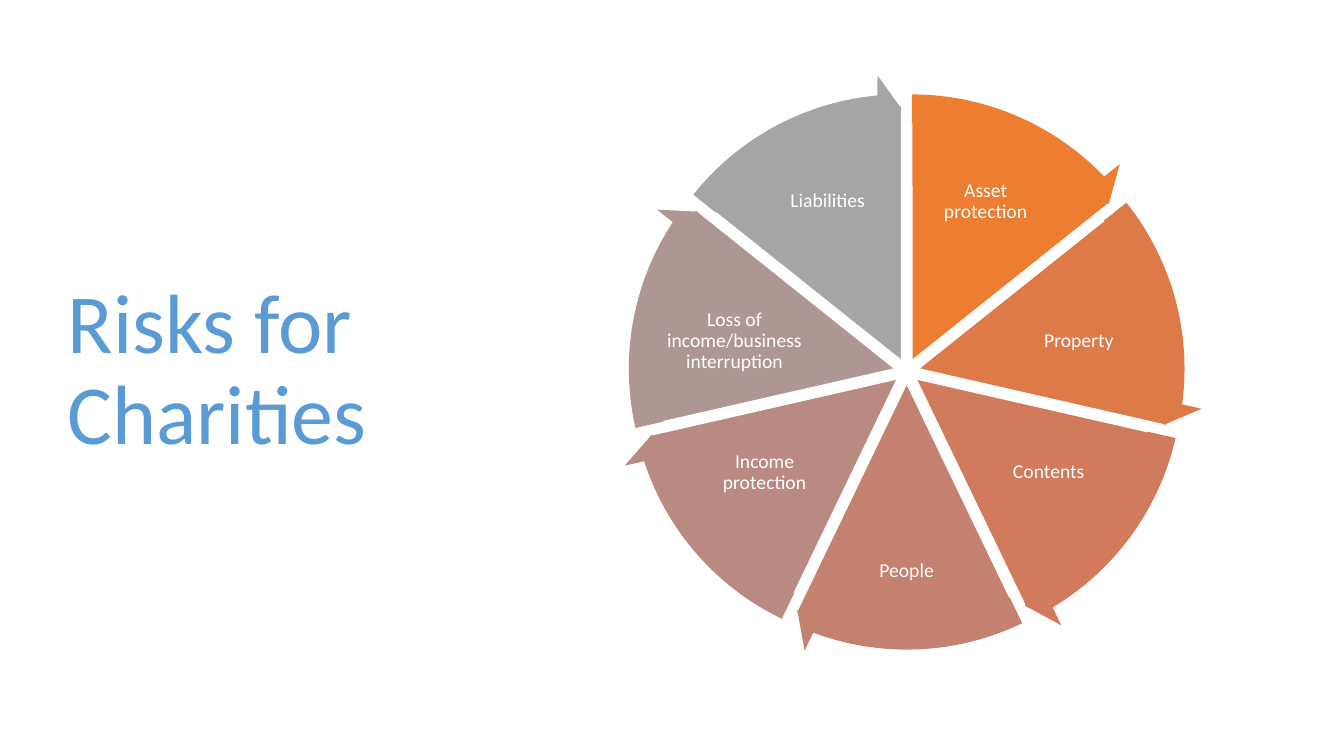
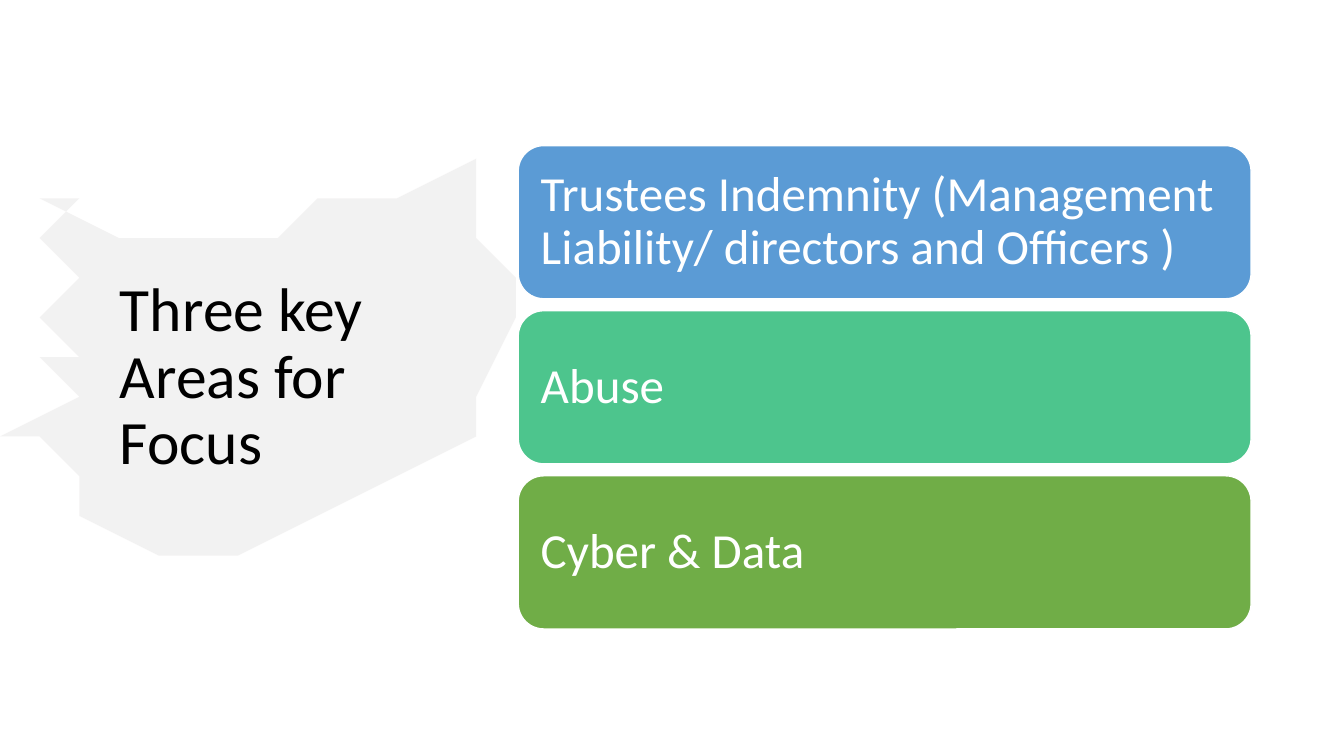
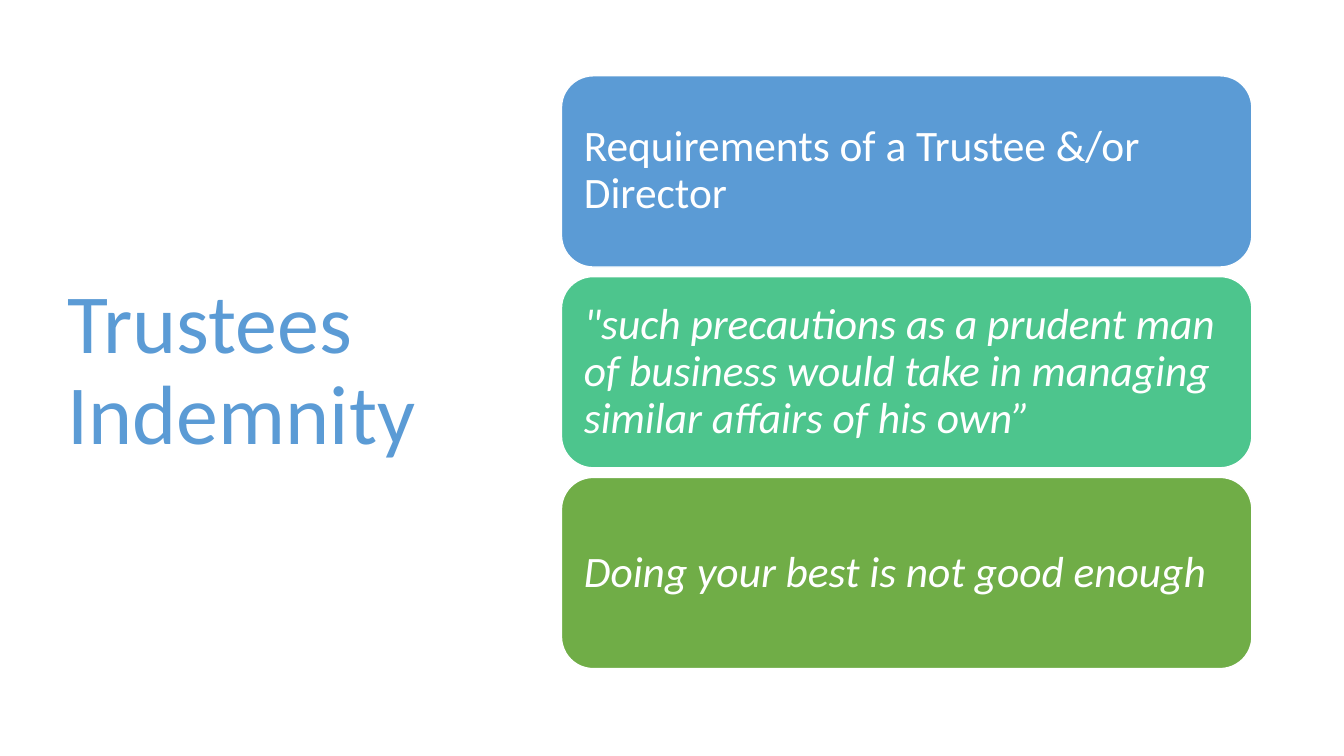
import pptx
import pptx.util
import pptx.dml.color
import pptx.enum.shapes
import pptx.enum.text
import pptx.oxml.ns
import lxml.etree
import itertools
import math

Cm, Pt = pptx.util.Cm, pptx.util.Pt
RGBColor = pptx.dml.color.RGBColor
MSO_SHAPE = pptx.enum.shapes.MSO_SHAPE
ANCHOR = pptx.enum.text.MSO_ANCHOR
ALIGN = pptx.enum.text.PP_ALIGN

# Shared style
FONT = "Calibri"
WHITE = RGBColor(0xFF, 0xFF, 0xFF)
BLACK = RGBColor(0x00, 0x00, 0x00)
BLUE = RGBColor(0x5B, 0x9B, 0xD5)
MINT = RGBColor(0x4D, 0xC5, 0x8D)
GREEN = RGBColor(0x70, 0xAD, 0x47)
BRUSH_GREY = RGBColor(0xE7, 0xE6, 0xE6)
CARD_COLOURS = [BLUE, MINT, GREEN]
TITLE_BOX = (1.45, 1.73, 10.57, 15.29)

# Slide 1: sectors run clockwise from the top
RISKS = [
    ("Asset protection", RGBColor(0xED, 0x7D, 0x31)),
    ("Property", RGBColor(0xDE, 0x7A, 0x47)),
    ("Contents", RGBColor(0xD1, 0x7B, 0x5C)),
    ("People", RGBColor(0xC4, 0x81, 0x70)),
    ("Income protection", RGBColor(0xB9, 0x8A, 0x82)),
    ("Loss of income/business interruption", RGBColor(0xAE, 0x96, 0x94)),
    ("Liabilities", RGBColor(0xA5, 0xA5, 0xA5)),
]
WHEEL_CENTRE = (22.85, 9.36)
SECTOR_SHIFT = 0.3
PIE_SIZE, ARROW_SIZE = 12.85, 14.43
# Offset from the wheel centre, then size; the left half mirrors the right
LABEL_BOXES = [
    (1.99, -4.28, 3.05, 2.44),
    (4.34, -0.77, 3.52, 2.13),
    (3.58, 2.55, 3.05, 2.36),
    (0, 5.04, 2.97, 2.13),
]

# Slides 2 and 3: card text and whether it is italic
FOCUS_AREAS = [
    ("Trustees Indemnity (Management Liability/ directors and Officers )", False),
    ("Abuse", False),
    ("Cyber & Data", False),
]
DUTIES = [
    ("Requirements of a Trustee &/or Director", False),
    ("\"such precautions as a prudent man of business would take in managing "
     "similar affairs of his own”", True),
    ("Doing your best is not good enough", True),
]

# Brush stroke in cm: smooth edge from the top right tip round to the lower left
BRUSH_EDGE = [
    (11.7, 3.8), (12, 4.1), (12.5, 5.3), (12.3, 6), (12.6, 6.9),
    (13.05, 8.4), (12.1, 10.1), (11.6, 11), (10.1, 12.3),
    (8.5, 13.3), (6.3, 13.8), (3.5, 13.7), (2.5, 13.2),
]
# Bristle tips up the left side; a notch is cut between each two
BRISTLE_TIPS = [
    (1.7, 12.8), (0.9, 11.4), (0.5, 10.9), (0.9, 9.1),
    (0.65, 8.4), (0.8, 7.8), (0.75, 5.8), (1.2, 4.65),
]
NOTCH_DEPTH = 0.7
# Upper edge back to the start
BRUSH_TOP = [(3.3, 5.7), (4.9, 5.95), (6.6, 5.8), (8.3, 5.4), (10.2, 4.6)]


def write(text_frame, text, size, color, align=ALIGN.LEFT, italic=False, inset=None):
    text_frame.word_wrap = True
    text_frame.auto_size = pptx.enum.text.MSO_AUTO_SIZE.NONE
    text_frame.vertical_anchor = ANCHOR.MIDDLE
    if inset is not None:
        text_frame.margin_left = text_frame.margin_right = Cm(inset)
        text_frame.margin_top = text_frame.margin_bottom = Cm(inset)
    paragraph = text_frame.paragraphs[0]
    paragraph.alignment = align
    paragraph.line_spacing = 0.9
    run = paragraph.add_run()
    run.text = text
    run.font.name = FONT
    run.font.size = Pt(size)
    run.font.italic = italic
    run.font.color.rgb = color


def paint(shape, fill, outlined):
    shape.shadow.inherit = False
    shape.fill.solid()
    shape.fill.fore_color.rgb = fill
    if outlined:
        shape.line.color.rgb = WHITE
        shape.line.width = Pt(1)
    else:
        shape.line.fill.background()


def centred_box(x, y, width, height):
    return Cm(x - width / 2), Cm(y - height / 2), Cm(width), Cm(height)


def add_titled_slide(presentation, title, box=TITLE_BOX, size=60, color=BLUE):
    slide = presentation.slides.add_slide(presentation.slide_layouts[5])
    shape = slide.shapes.title
    shape.left, shape.top, shape.width, shape.height = map(Cm, box)
    write(shape.text_frame, title, size=size, color=color)
    return slide


def add_cards(slide, cards, left, top, width, height, gap, size, inset):
    for index, ((text, italic), fill) in enumerate(zip(cards, CARD_COLOURS)):
        card = slide.shapes.add_shape(
            MSO_SHAPE.ROUNDED_RECTANGLE, Cm(left), Cm(top + index * (height + gap)),
            Cm(width), Cm(height))
        paint(card, fill, outlined=True)
        write(card.text_frame, text, size=size, color=WHITE, italic=italic, inset=inset)


def add_risk_wheel(slide):
    count = len(RISKS)
    sweep = 360 / count
    unit = 0.6  # adjustment value of one degree
    sectors = []
    for index, (text, fill) in enumerate(RISKS):
        start = 270 + index * sweep
        middle = math.radians(start + sweep / 2)
        x = WHEEL_CENTRE[0] + SECTOR_SHIFT * math.cos(middle)
        y = WHEEL_CENTRE[1] + SECTOR_SHIFT * math.sin(middle)
        sectors.append((x, y, start, fill))

        # Sector
        pie = slide.shapes.add_shape(MSO_SHAPE.PIE, *centred_box(x, y, PIE_SIZE, PIE_SIZE))
        pie.adjustments[0] = start % 360 * unit
        pie.adjustments[1] = (start + sweep) % 360 * unit
        paint(pie, fill, outlined=True)

        # Label
        mirror = count - 1 - index
        across, down, width, height = LABEL_BOXES[min(index, mirror)]
        side = 1 if index <= mirror else -1
        label = slide.shapes.add_textbox(*centred_box(
            WHEEL_CENTRE[0] + side * across, WHEEL_CENTRE[1] + down, width, height))
        write(label.text_frame, text, size=14, color=WHITE, align=ALIGN.CENTER, inset=0.05)

    # Arrows along the rim
    head = 3.28
    for x, y, start, fill in sectors:
        arrow = slide.shapes.add_shape(
            MSO_SHAPE.CIRCULAR_ARROW, *centred_box(x, y, ARROW_SIZE, ARROW_SIZE))
        end = (start + sweep) * unit - head
        values = (0.05, head, end % (360 * unit), start % 360 * unit, 0.06)
        for position, value in enumerate(values):
            arrow.adjustments[position] = value
        paint(arrow, fill, outlined=False)


def add_brush_stroke(slide):
    bristles = [BRISTLE_TIPS[0]]
    for (x, y), (next_x, next_y) in itertools.pairwise(BRISTLE_TIPS):
        notch = (max(x, next_x) + NOTCH_DEPTH, (y + next_y) / 2)
        bristles += [notch, (next_x, next_y)]
    outline = BRUSH_EDGE + bristles + BRUSH_TOP

    builder = slide.shapes.build_freeform(*outline[0], scale=Cm(1))
    builder.add_line_segments(outline[1:], close=True)
    brush = builder.convert_to_shape()
    paint(brush, BRUSH_GREY, outlined=False)
    qualified = pptx.oxml.ns.qn
    color = brush.element.spPr.find(qualified("a:solidFill")).find(qualified("a:srgbClr"))
    lxml.etree.SubElement(color, qualified("a:alpha")).set("val", "50000")
    # The title sits in front of the stroke
    slide.shapes.title.element.addprevious(brush.element)


def main():
    presentation = pptx.Presentation()
    presentation.slide_width, presentation.slide_height = Cm(33.87), Cm(19.05)

    add_risk_wheel(add_titled_slide(presentation, "Risks for Charities"))

    focus = add_titled_slide(presentation, "Three key Areas for Focus",
                             box=(2.77, 1.9, 9.7, 15.27), size=44, color=BLACK)
    add_brush_stroke(focus)
    add_cards(focus, FOCUS_AREAS, left=13.06, top=3.67, width=18.47, height=3.86,
              gap=0.3, size=35, inset=0.38)

    indemnity = add_titled_slide(presentation, "Trustees Indemnity")
    add_cards(indemnity, DUTIES, left=14.15, top=1.91, width=17.4, height=4.82,
              gap=0.24, size=31, inset=0.33)

    presentation.save("out.pptx")


if __name__ == "__main__":
    main()
